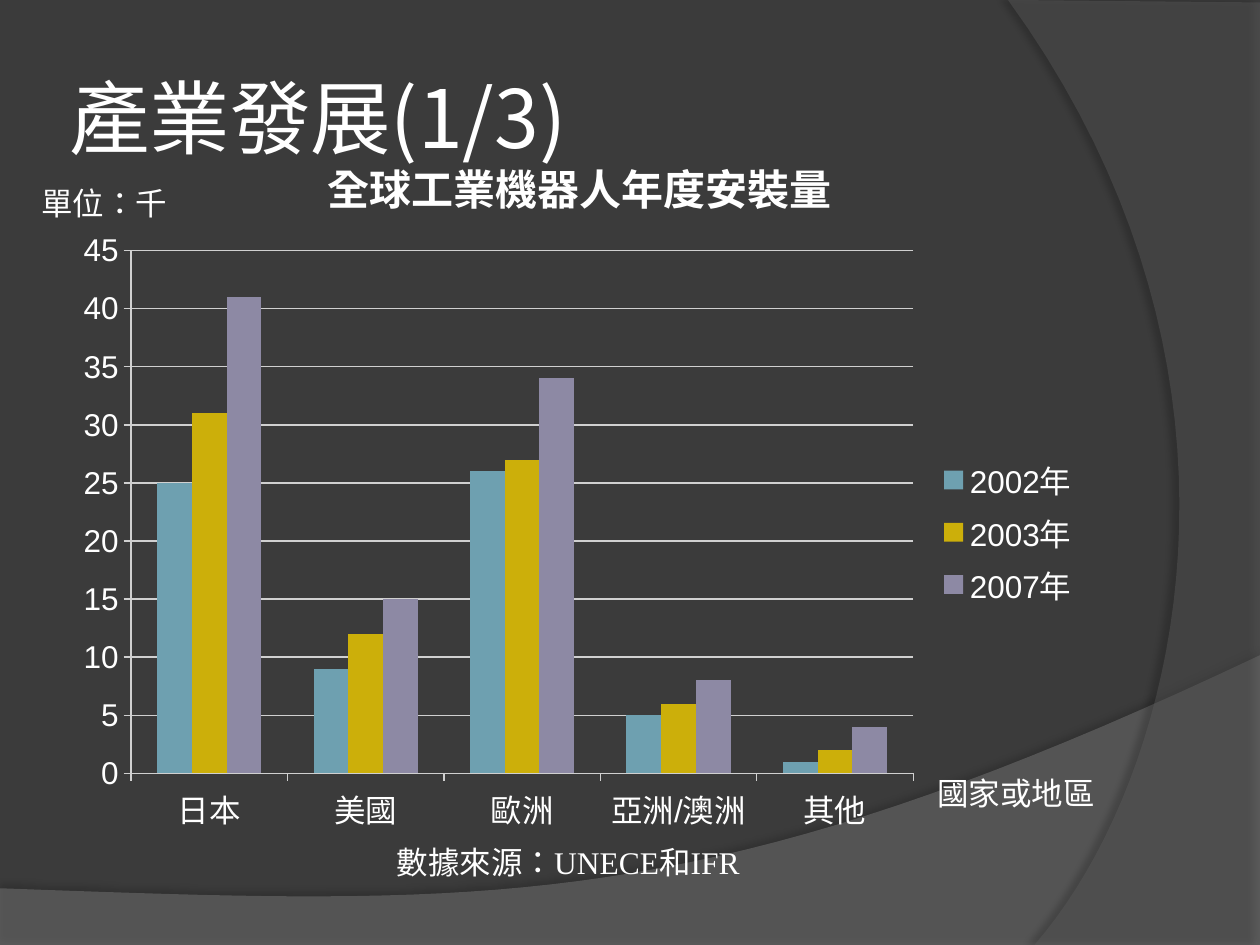
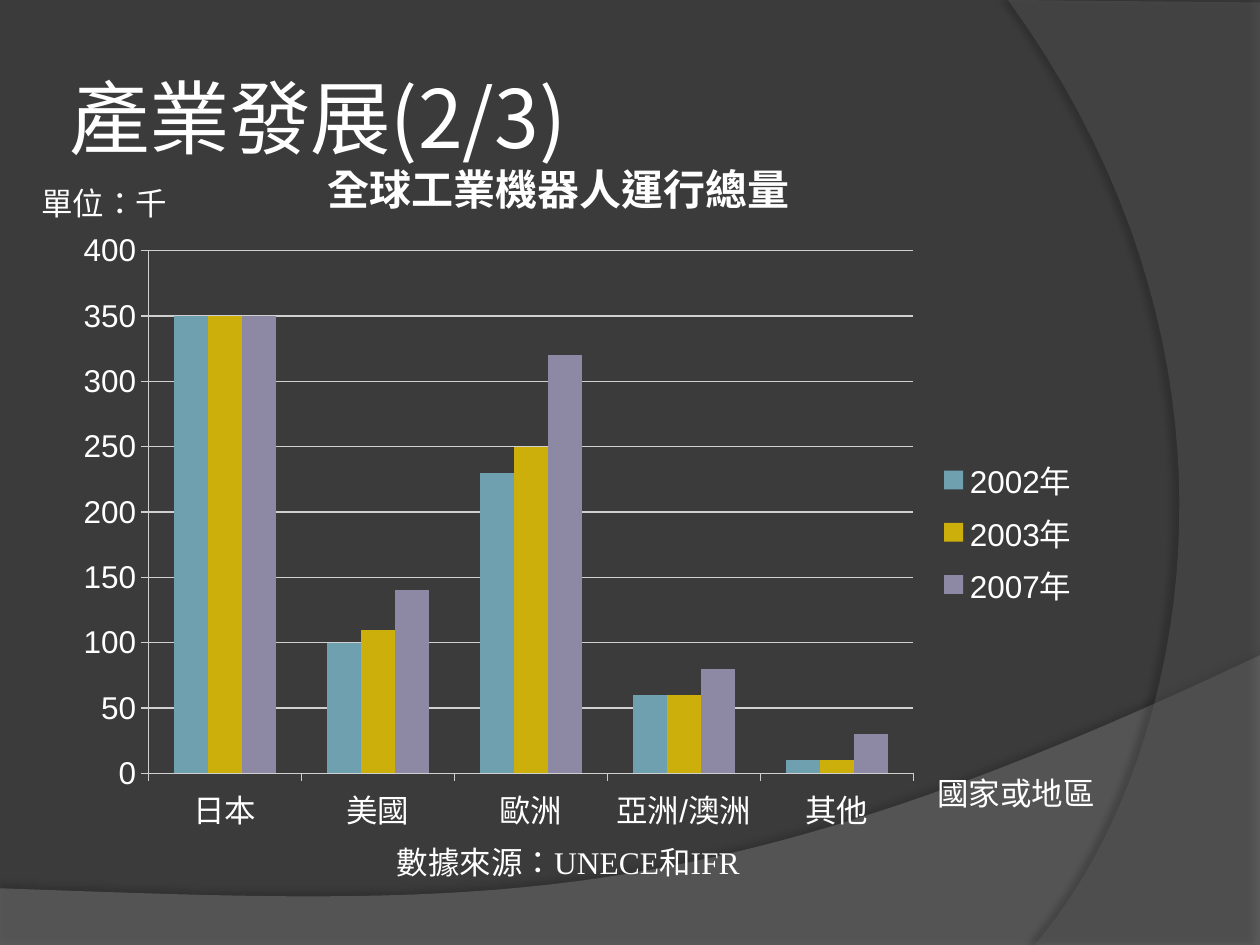
import lxml.etree
import pptx
import pptx.chart.data
import pptx.dml.color
import pptx.enum.chart
import pptx.enum.text
import pptx.oxml
import pptx.oxml.ns
import pptx.util

WIDTH, HEIGHT = 10, 7.5
BACKGROUND, WHITE, RULE = "3B3B3B", "FFFFFF", "D0D0D0"
CJK, LATIN, CHART_FONT = "Noto Sans CJK SC", "Times New Roman", "Arial"

REGIONS = ["日本", "美國", "歐洲", "亞洲/澳洲", "其他"]
YEARS = [("2002年", "6EA0B0"), ("2003年", "CCAF0A"), ("2007年", "8D89A4")]
SLIDES = [
    dict(title="產業發展(1/3)", heading="全球工業機器人年度安裝量", heading_width=4.24,
         top=45, step=5,
         values=[(25, 9, 26, 5, 1), (31, 12, 27, 6, 2), (41, 15, 34, 8, 4)]),
    dict(title="產業發展(2/3)", heading="全球工業機器人運行總量", heading_width=3.9,
         top=400, step=50,
         values=[(350, 100, 230, 60, 10), (350, 110, 250, 60, 10),
                 (350, 140, 320, 80, 30)]),
]
SOURCE = [("數據來源：", CJK), ("UNECE", LATIN), ("和", CJK), ("IFR", LATIN)]

# Each band is a start point, then line ends (one point) or curves (three points).
BANDS = [
    dict(start=(0, 7.05), color="7F7F7F", alpha=45,
         shadow=dict(alpha=35, blur=4, dist=3.5, angle=270),
         steps=[[(0, 7.51)], [(10, 7.51)], [(10, 5.2)],
                [(5.59, 7.29), (3.91, 7.19), (0, 7.05)]]),
    dict(start=(10, 0.02), color="5E5E5E", alpha=40,
         shadow=dict(alpha=45, blur=4, dist=4, angle=180),
         steps=[[(10, 7.5)], [(8.21, 7.5)],
                [(9.35, 6.19), (10.18, 3), (8, 0)]]),
]


def rgb(value):
    return pptx.dml.color.RGBColor.from_string(value)


def curve(p0, p1, p2, p3, count=40):
    """Points along a cubic Bezier curve, without its start."""
    points = []
    for i in range(1, count + 1):
        t = i / count
        weights = ((1 - t) ** 3, 3 * t * (1 - t) ** 2, 3 * t * t * (1 - t), t ** 3)
        points.append(tuple(sum(w * p[axis] for w, p in zip(weights, (p0, p1, p2, p3)))
                            for axis in (0, 1)))
    return points


def add_band(s, start, color, alpha, shadow, steps):
    points = [start]
    for step in steps:
        points += step if len(step) == 1 else curve(points[-1], *step)
    points = [tuple(map(pptx.util.Inches, point)) for point in points]
    builder = s.shapes.build_freeform(*points[0])
    builder.add_line_segments(points[1:], close=True)
    sp = builder.convert_to_shape()
    sp.fill.solid()
    sp.fill.fore_color.rgb = rgb(color)
    sp.line.fill.background()
    fill = sp._element.spPr.find(".//" + pptx.oxml.ns.qn("a:srgbClr"))
    lxml.etree.SubElement(fill, pptx.oxml.ns.qn("a:alpha"), val=str(alpha * 1000))
    sp._element.spPr.append(pptx.oxml.parse_xml(
        f'<a:effectLst {pptx.oxml.ns.nsdecls("a")}>'
        f'<a:outerShdw blurRad="{pptx.util.Pt(shadow["blur"])}" '
        f'dist="{pptx.util.Pt(shadow["dist"])}" dir="{shadow["angle"] * 60000}" '
        f'algn="ctr" rotWithShape="0"><a:srgbClr val="000000">'
        f'<a:alpha val="{shadow["alpha"] * 1000}"/></a:srgbClr>'
        f'</a:outerShdw></a:effectLst>'))


def add_text(s, runs, at, size=18, bold=False, wrap=False, middle=False, inset=0.1):
    """Add a text box; runs is a string or a list of (text, font) pairs."""
    sp = s.shapes.add_textbox(*map(pptx.util.Inches, at))
    tf = sp.text_frame
    tf.word_wrap = wrap
    tf.margin_left = tf.margin_right = pptx.util.Inches(inset)
    if middle:
        tf.vertical_anchor = pptx.enum.text.MSO_ANCHOR.MIDDLE
    for text, font in [(runs, CJK)] if isinstance(runs, str) else runs:
        r = tf.paragraphs[0].add_run()
        r.text = text
        r.font.name, r.font.size, r.font.bold = font, pptx.util.Pt(size), bold
        r.font.color.rgb = rgb(WHITE)
        r.font._element.set("lang", "zh-TW")
        east_asian = lxml.etree.Element(pptx.oxml.ns.qn("a:ea"), typeface=CJK)
        r.font._element.find(pptx.oxml.ns.qn("a:latin")).addnext(east_asian)


def add_column_chart(s, values, top, step, at):
    data = pptx.chart.data.CategoryChartData()
    data.categories = REGIONS
    for (year, _), row in zip(YEARS, values):
        data.add_series(year, row)
    kind = pptx.enum.chart.XL_CHART_TYPE.COLUMN_CLUSTERED
    chart = s.shapes.add_chart(kind, *map(pptx.util.Inches, at), data).chart
    chart.has_title = False
    chart.font.name, chart.font.size = CHART_FONT, pptx.util.Pt(18)
    chart.font.color.rgb = rgb(WHITE)

    chart.has_legend = True
    chart.legend.position = pptx.enum.chart.XL_LEGEND_POSITION.RIGHT
    chart.legend.include_in_layout = False

    plot = chart.plots[0]
    plot.vary_by_categories = False
    plot.gap_width, plot.overlap = 150, 0
    for series, (_, color) in zip(plot.series, YEARS):
        series.format.fill.solid()
        series.format.fill.fore_color.rgb = rgb(color)
        series.invert_if_negative = False

    axis = chart.value_axis
    axis.minimum_scale, axis.maximum_scale, axis.major_unit = 0, top, step
    axis.has_major_gridlines = True
    for part in (axis, chart.category_axis, axis.major_gridlines):
        part.format.line.color.rgb = rgb(RULE)
        part.format.line.width = pptx.util.Pt(0.75)
    for part in (axis, chart.category_axis):
        part.major_tick_mark = pptx.enum.chart.XL_TICK_MARK.OUTSIDE


def add_slide(prs, title, heading, heading_width, top, step, values):
    s = prs.slides.add_slide(prs.slide_layouts[6])
    s.background.fill.solid()
    s.background.fill.fore_color.rgb = rgb(BACKGROUND)
    for band in BANDS:
        add_band(s, **band)
    add_text(s, title, (0.5, 0.3, 8.17, 1.25), size=46, wrap=True, middle=True, inset=0.05)
    add_column_chart(s, values, top, step, (0.5, 1.75, 8.17, 4.95))
    add_text(s, "單位：千", (0.23, 1.41, 1.21, 0.4))
    add_text(s, "國家或地區", (7.34, 6.09, 1.46, 0.4))
    add_text(s, SOURCE, (3.05, 6.64, 2.94, 0.4), wrap=True)
    add_text(s, heading, (2.5, 1.25, heading_width, 0.5), size=24, bold=True)


def main():
    prs = pptx.Presentation()
    prs.slide_width, prs.slide_height = map(pptx.util.Inches, (WIDTH, HEIGHT))
    for content in SLIDES:
        add_slide(prs, **content)
    prs.save("out.pptx")


if __name__ == "__main__":
    main()
